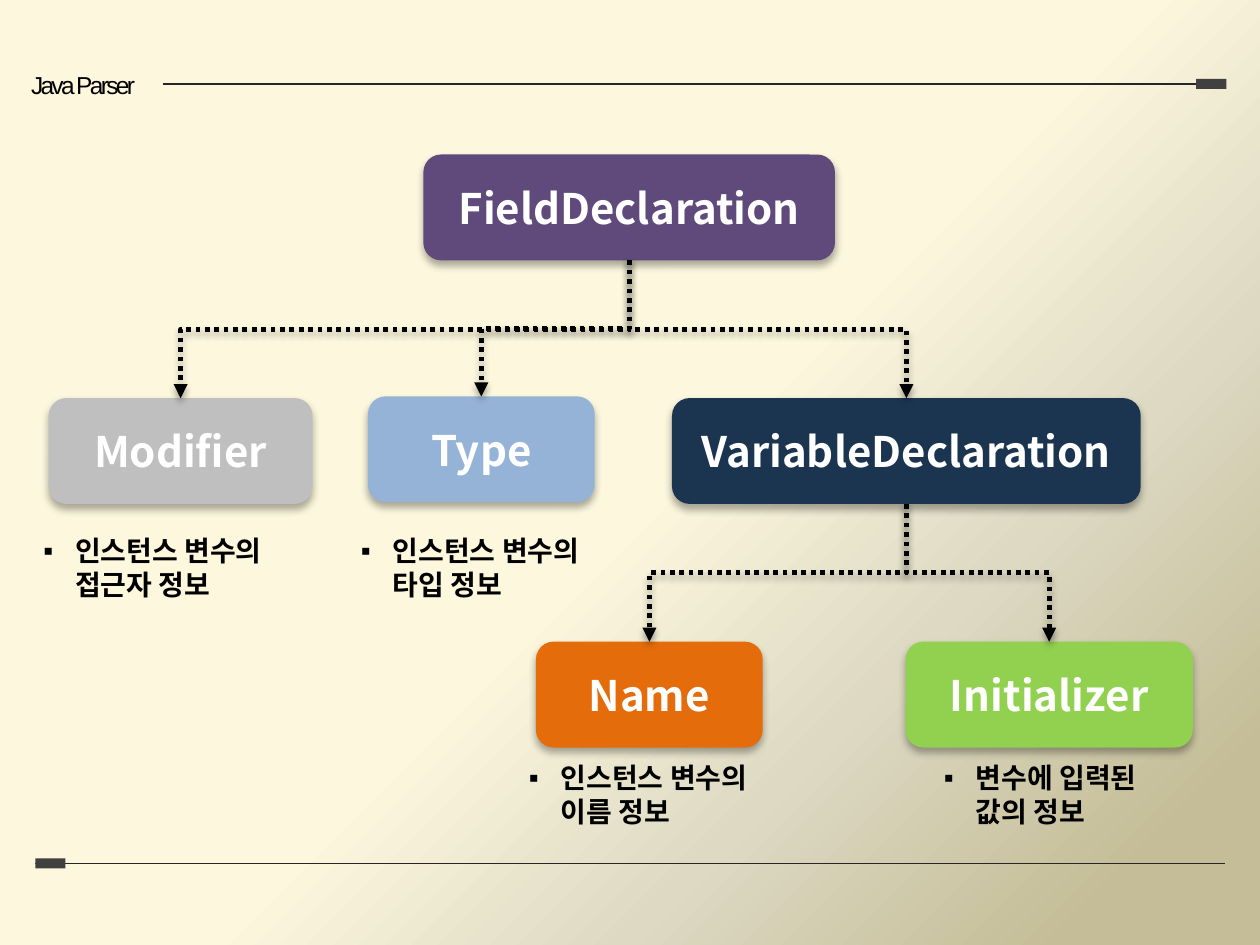
import copy

import pptx
import pptx.dml.color
import pptx.enum.shapes
import pptx.enum.text
import pptx.oxml
import pptx.oxml.ns
import pptx.util
from lxml import etree

Inches = pptx.util.Inches
Pt = pptx.util.Pt
qn = pptx.oxml.ns.qn
RGB = pptx.dml.color.RGBColor.from_string
SHAPES = pptx.enum.shapes.MSO_SHAPE
CONNECTORS = pptx.enum.shapes.MSO_CONNECTOR
ALIGN = pptx.enum.text.PP_ALIGN
ANCHOR = pptx.enum.text.MSO_ANCHOR
NAMESPACE = pptx.oxml.ns.nsdecls("a")

THEME = {
    "background": [(52, "FCF7DD"), (71, "DDD9C3"), (91, "C4BD97")],
    "rule": "262626",
    "tab": "404040",
    "ink": "000000",
    "title": {"name": "Arial", "size": Pt(10.5), "bold": False},
    "node": {"name": "Noto Sans CJK KR", "size": Pt(18), "bold": True},
    "note": {"name": "Noto Sans CJK KR", "size": Pt(12), "bold": True},
    "node_shadow": (32, 3.5, 2.2),
    "arrow_shadow": (38, 3.1, 1.6),
}


def write(paragraph, text, style, color):
    """Write text in one style, with line breaks at vertical tabs."""
    paragraph.text = text
    for run in paragraph.runs:
        for attribute, value in style.items():
            setattr(run.font, attribute, value)
        run.font.color.rgb = RGB(color)
        properties = run.font._element
        etree.SubElement(properties, qn("a:ea")).set("typeface", style["name"])
        for line_break in paragraph._p.findall(qn("a:br")):
            if len(line_break) == 0:
                line_break.append(copy.deepcopy(properties))


def add_shadow(shape, opacity, blur, distance):
    """Give a shape a soft shadow straight below it."""
    shape._element.spPr.append(pptx.oxml.parse_xml(
        f'<a:effectLst {NAMESPACE}><a:outerShdw blurRad="{Pt(blur)}" dist="{Pt(distance)}" '
        f'dir="5400000" rotWithShape="0"><a:srgbClr val="{THEME["ink"]}">'
        f'<a:alpha val="{opacity * 1000}"/></a:srgbClr></a:outerShdw></a:effectLst>'))


# Slide in the 4:3 format
presentation = pptx.Presentation()
presentation.slide_width = Inches(7.5)
presentation.slide_height = Inches(7.5 * 3 / 4)
slide = presentation.slides.add_slide(presentation.slide_layouts[6])

# Background gradient, spreading from the top left corner
slide.background.fill.gradient()
gradient = slide.background._cSld.find(".//" + qn("a:gradFill"))
stops = "".join(f'<a:gs pos="{position * 1000}"><a:srgbClr val="{color}"/></a:gs>'
                for position, color in THEME["background"])
gradient.getparent().replace(gradient, pptx.oxml.parse_xml(
    f'<a:gradFill {NAMESPACE} rotWithShape="1"><a:gsLst>{stops}</a:gsLst>'
    '<a:path path="circle"><a:fillToRect r="100000" b="100000"/></a:path></a:gradFill>'))

# Header and footer rules with their end tabs
for rule_left, rule_y, tab_left in [(0.21, 5.14, 0.21), (0.97, 0.5, 7.12)]:
    rule = slide.shapes.add_connector(
        CONNECTORS.STRAIGHT, Inches(rule_left), Inches(rule_y), Inches(7.29), Inches(rule_y))
    rule.line.color.rgb = RGB(THEME["rule"])
    rule.line.width = Pt(0.75)
    etree.SubElement(rule._element.spPr, qn("a:effectLst"))
    tab = slide.shapes.add_shape(
        SHAPES.RECTANGLE, Inches(tab_left), Inches(rule_y - 0.03), Inches(0.18), Inches(0.06))
    tab.shadow.inherit = False
    tab.fill.solid()
    tab.fill.fore_color.rgb = RGB(THEME["tab"])
    tab.line.fill.background()

# Title
title = slide.shapes.add_textbox(Inches(-0.42), Inches(0.37), Inches(1.83), Inches(0.28))
title.text_frame.word_wrap = True
paragraph = title.text_frame.paragraphs[0]
paragraph.alignment = ALIGN.CENTER
write(paragraph, "Java Parser", THEME["title"], THEME["ink"])
paragraph.runs[0].font._element.set("spc", "-110")

# Tree nodes: left, top, width, fill
NODE_HEIGHT = 0.63
nodes = {
    "FieldDeclaration": (2.52, 0.92, 2.45, "604A7B"),
    "Modifier": (0.29, 2.37, 1.57, "BFBFBF"),
    "Type": (2.19, 2.36, 1.35, "95B3D7"),
    "VariableDeclaration": (4, 2.37, 2.79, "1B3551"),
    "Name": (3.19, 3.82, 1.35, "E46C0A"),
    "Initializer": (5.39, 3.82, 1.71, "92D050"),
}
for name, (left, top, width, color) in nodes.items():
    node = slide.shapes.add_shape(
        SHAPES.ROUNDED_RECTANGLE, Inches(left), Inches(top), Inches(width), Inches(NODE_HEIGHT))
    node.fill.solid()
    node.fill.fore_color.rgb = RGB(color)
    node.line.fill.background()
    add_shadow(node, *THEME["node_shadow"])
    node.text_frame.word_wrap = False
    node.text_frame.vertical_anchor = ANCHOR.MIDDLE
    paragraph = node.text_frame.paragraphs[0]
    paragraph.alignment = ALIGN.CENTER
    write(paragraph, name, THEME["node"], "FFFFFF")

# Dotted arrows from the bottom of a parent to the top of its child
branches = [
    ("FieldDeclaration", "Modifier"),
    ("FieldDeclaration", "VariableDeclaration"),
    ("VariableDeclaration", "Name"),
    ("VariableDeclaration", "Initializer"),
    ("FieldDeclaration", "Type"),
]
for parent, child in branches:
    parent_left, parent_top, parent_width, _ = nodes[parent]
    child_left, child_top, child_width, _ = nodes[child]
    start_x, start_y = parent_left + parent_width / 2, parent_top + NODE_HEIGHT
    end_x = child_left + child_width / 2
    drop, spread = child_top - start_y, abs(end_x - start_x)
    # An elbow runs sideways first, so it is laid flat and turned about its centre
    left = (start_x + end_x - drop) / 2
    top = (start_y + child_top - spread) / 2
    arrow = slide.shapes.add_connector(
        CONNECTORS.ELBOW, Inches(left), Inches(top), Inches(left + drop), Inches(top + spread))
    transform = arrow._element.spPr.find(qn("a:xfrm"))
    if end_x < start_x:
        transform.set("rot", "5400000")
    else:
        transform.set("rot", "16200000")
        transform.set("flipH", "1")
    arrow.line.color.rgb = RGB(THEME["ink"])
    arrow.line.width = Pt(2)
    outline = arrow.line._get_or_add_ln()
    etree.SubElement(outline, qn("a:prstDash")).set("val", "sysDot")
    etree.SubElement(outline, qn("a:tailEnd")).set("type", "triangle")
    add_shadow(arrow, *THEME["arrow_shadow"])

# Notes under the leaf nodes
notes = [
    (0.16, 3.13, 1.63, "인스턴스 변수의\v접근자 정보"),
    (2.05, 3.13, 1.63, "인스턴스 변수의\v타입 정보"),
    (5.52, 4.48, 1.46, "변수에 입력된\v값의 정보"),
    (3.05, 4.48, 1.63, "인스턴스 변수의\v이름 정보"),
]
for left, top, width, text in notes:
    note = slide.shapes.add_textbox(Inches(left), Inches(top), Inches(width), Inches(0.5))
    note.text_frame.word_wrap = False
    paragraph = note.text_frame.paragraphs[0]
    properties = paragraph._p.get_or_add_pPr()
    properties.set("marL", str(Inches(0.19)))
    properties.set("indent", str(Inches(-0.19)))
    etree.SubElement(properties, qn("a:buFont")).set("typeface", "Arial")
    etree.SubElement(properties, qn("a:buChar")).set("char", "▪")
    write(paragraph, text, THEME["note"], THEME["ink"])

presentation.save("out.pptx")
